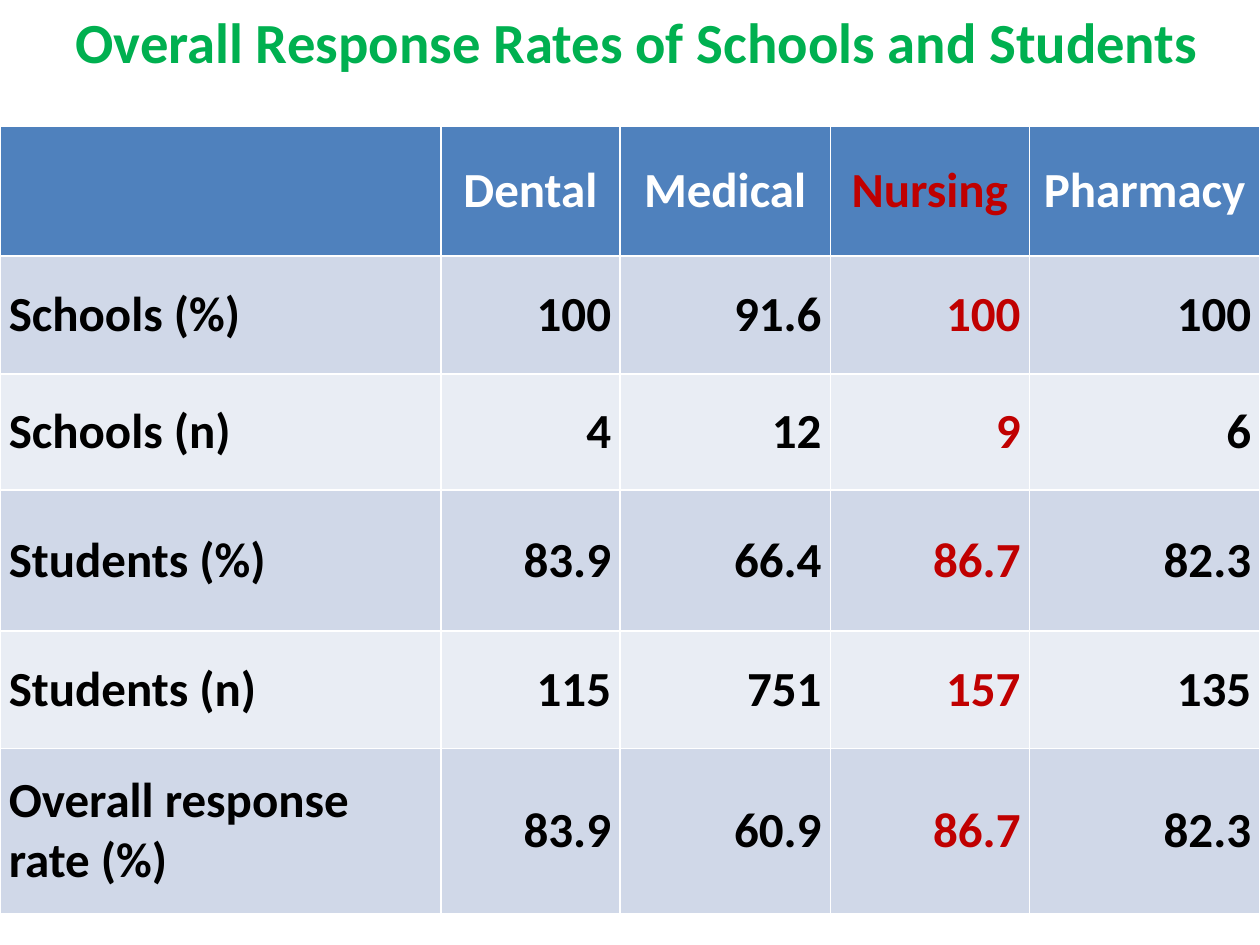
from collections import namedtuple
from dataclasses import dataclass

from pptx import Presentation
from pptx.dml.color import RGBColor
from pptx.enum.text import MSO_ANCHOR, PP_ALIGN
from pptx.util import Inches, Pt

MIDDLE = MSO_ANCHOR.MIDDLE
LEFT, CENTER, RIGHT = PP_ALIGN.LEFT, PP_ALIGN.CENTER, PP_ALIGN.RIGHT
BLANK_LAYOUT = 6

Box = namedtuple("Box", "left top width height")


@dataclass(frozen=True)
class Theme:
    font: str = "Calibri"
    title_size: float = 32.4
    table_size: float = 28
    title: str = "00B050"
    header_text: str = "FFFFFF"
    body_text: str = "000000"
    highlight: str = "C00000"
    header_fill: str = "4F81BD"
    bands: tuple = ("D0D8E8", "E9EDF4")


THEME = Theme()
TITLE = "Overall Response Rates of Schools and Students"
HIGHLIGHT_COLUMN = 3
COLUMN_WEIGHTS = (3.5, 1.42, 1.67, 1.58, 1.83)
ROW_WEIGHTS = (1.03, 0.94, 0.92, 1.12, 0.93, 1.31)
RESPONSE_RATES = (
    ("", "Dental", "Medical", "Nursing", "Pharmacy"),
    ("Schools (%)", "100", "91.6", "100", "100"),
    ("Schools (n)", "4", "12", "9", "6"),
    ("Students (%)", "83.9", "66.4", "86.7", "82.3"),
    ("Students (n)", "115", "751", "157", "135"),
    ("Overall response rate (%)", "83.9", "60.9", "86.7", "82.3"),
)


def write_text(text_frame, text, *, size, color, align):
    paragraph = text_frame.paragraphs[0]
    paragraph.alignment = align
    run = paragraph.add_run()
    run.text = text
    run.font.name = THEME.font
    run.font.size = Pt(size)
    run.font.bold = True
    run.font.color.rgb = RGBColor.from_string(color)


def add_title(slide, box):
    text_frame = slide.shapes.add_textbox(*box).text_frame
    text_frame.word_wrap = True
    text_frame.vertical_anchor = MIDDLE
    text_frame.margin_top = 0
    text_frame.margin_bottom = int(box.height * 0.81)
    write_text(text_frame, TITLE, size=THEME.title_size, color=THEME.title, align=LEFT)


def share_lengths(tracks, weights, total, attribute):
    for track, weight in zip(tracks, weights):
        setattr(track, attribute, int(total * weight / sum(weights)))


def format_cell(cell, text, row, column):
    is_header = row == 0
    fill = THEME.header_fill if is_header else THEME.bands[(row - 1) % 2]
    cell.fill.solid()
    cell.fill.fore_color.rgb = RGBColor.from_string(fill)
    cell.vertical_anchor = MIDDLE
    cell.margin_left = cell.margin_right = Inches(0.07)
    cell.margin_top = cell.margin_bottom = 0
    if not text:
        return
    color = THEME.header_text if is_header else THEME.body_text
    if column == HIGHLIGHT_COLUMN:
        color = THEME.highlight
    align = CENTER if is_header else LEFT if column == 0 else RIGHT
    write_text(cell.text_frame, text, size=THEME.table_size, color=color, align=align)


def add_response_table(slide, box):
    table = slide.shapes.add_table(len(ROW_WEIGHTS), len(COLUMN_WEIGHTS), *box).table
    share_lengths(table.columns, COLUMN_WEIGHTS, box.width, "width")
    share_lengths(table.rows, ROW_WEIGHTS, box.height, "height")
    for row, values in enumerate(RESPONSE_RATES):
        for column, text in enumerate(values):
            format_cell(table.cell(row, column), text, row, column)


def main():
    presentation = Presentation()
    presentation.slide_width = Inches(10)
    presentation.slide_height = Inches(7.5)
    column = presentation.slide_width // 40
    row = presentation.slide_height // 30
    slide = presentation.slides.add_slide(presentation.slide_layouts[BLANK_LAYOUT])
    add_title(slide, Box(2 * column, row, 37 * column, 3 * row))
    add_response_table(slide, Box(0, 4 * row, 40 * column, 25 * row))
    presentation.save("out.pptx")


if __name__ == "__main__":
    main()
